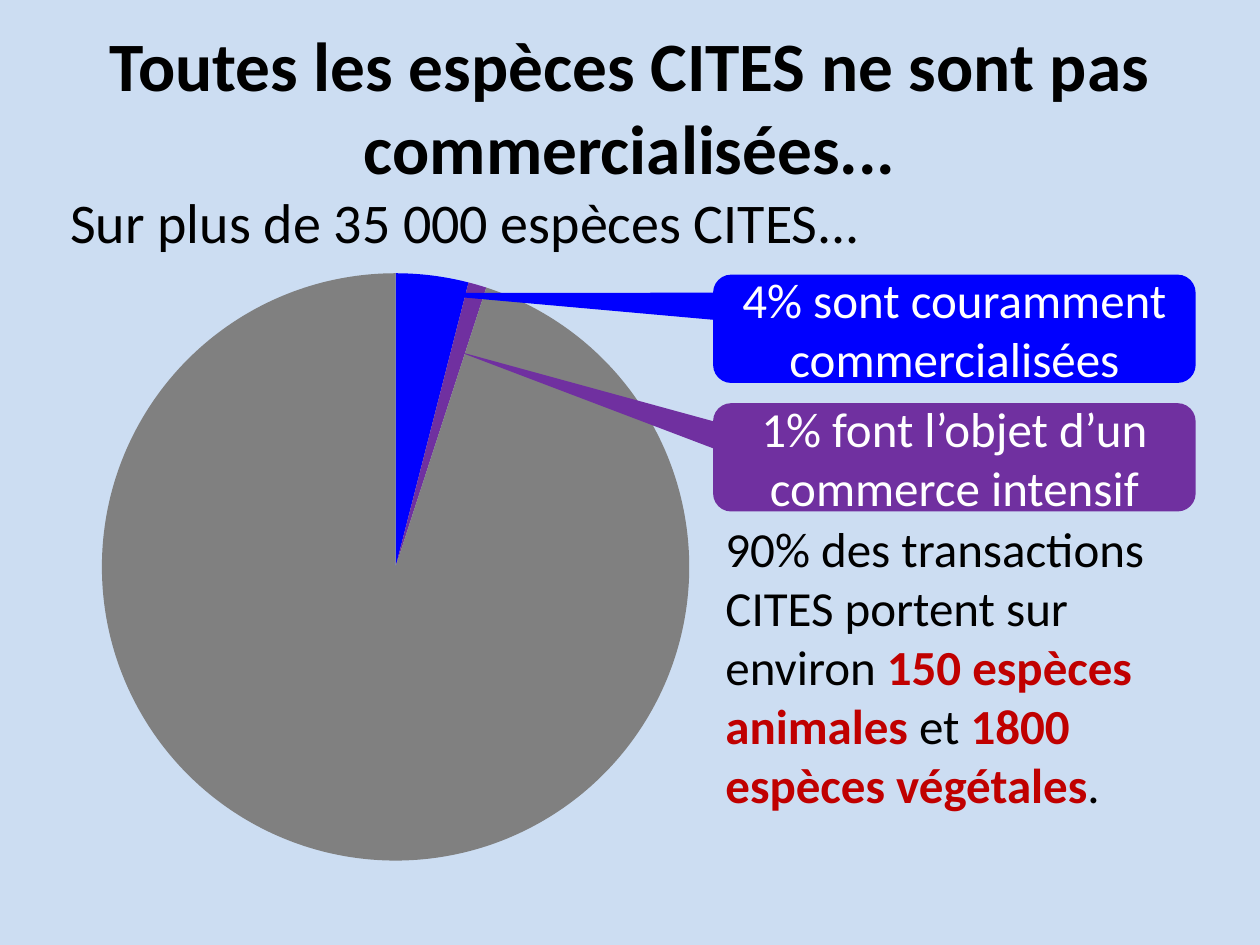
"""Build the slide on the share of CITES species that are traded."""
from lxml import etree
from pptx import Presentation
from pptx.chart.data import CategoryChartData
from pptx.dml.color import RGBColor
from pptx.enum.chart import XL_CHART_TYPE
from pptx.enum.shapes import MSO_SHAPE
from pptx.enum.text import MSO_ANCHOR, PP_ALIGN
from pptx.oxml import parse_xml
from pptx.oxml.ns import nsdecls, qn
from pptx.util import Inches, Pt

PIE = XL_CHART_TYPE.PIE
CALLOUT = MSO_SHAPE.ROUNDED_RECTANGULAR_CALLOUT
TOP, MIDDLE = MSO_ANCHOR.TOP, MSO_ANCHOR.MIDDLE
LEFT, CENTER = PP_ALIGN.LEFT, PP_ALIGN.CENTER
FONT = "Calibri"
COLORS = {
    "background": "CCDDF2",
    "text": "000000",
    "white": "FFFFFF",
    "common": "0000FF",
    "intensive": "7030A0",
    "other": "808080",
    "accent": "C00000",
}


def color(name):
    return RGBColor.from_string(COLORS[name])


def write(shape, runs, size, ink="text", align=LEFT, anchor=TOP):
    frame = shape.text_frame
    frame.word_wrap = True
    frame.vertical_anchor = anchor
    paragraph = frame.paragraphs[0]
    paragraph.alignment = align
    paragraph.font.name = FONT
    paragraph.font.size = Pt(size)
    paragraph.font.color.rgb = color(ink)
    for text, emphasis in runs:
        run = paragraph.add_run()
        run.text = text
        if emphasis:
            run.font.bold = True
            run.font.color.rgb = color(emphasis)


presentation = Presentation()
presentation.slide_width = Inches(10)
presentation.slide_height = Inches(7.5)
slide = presentation.slides.add_slide(presentation.slide_layouts[6])
slide.background.fill.solid()
slide.background.fill.fore_color.rgb = color("background")

title = slide.shapes.add_textbox(Inches(0), Inches(0.21), Inches(10), Inches(1.25))
write(title, [("Toutes les espèces CITES ne sont pas commercialisées...", "text")],
      39.6, align=CENTER, anchor=MIDDLE)

subtitle = slide.shapes.add_textbox(Inches(0.46), Inches(1.44), Inches(9.07), Inches(0.9))
write(subtitle, [("Sur plus de 35 000 espèces CITES...", None)], 32)

chart_data = CategoryChartData()
chart_data.categories = ["1", "2", "3"]
chart_data.add_series("Series 1", [4, 1, 95])
chart = slide.shapes.add_chart(
    PIE, Inches(0.07), Inches(2.02), Inches(6.14), Inches(4.96), chart_data).chart
chart.has_legend = False
chart.has_title = False
chart.font.name = FONT
chart.font.size = Pt(10)
chart.font.color.rgb = color("text")
plot = chart.plots[0]
plot.vary_by_categories = True
for index, name in enumerate(["common", "intensive", "other"]):
    point = plot.series[0].points[index]
    point.format.fill.solid()
    point.format.fill.fore_color.rgb = color(name)
    point.format.line.fill.background()

plot_area = chart.element.find(".//" + qn("c:plotArea"))
for old_layout in plot_area.findall(qn("c:layout")):
    plot_area.remove(old_layout)
layout = parse_xml(f"<c:layout {nsdecls('c')}><c:manualLayout/></c:layout>")
settings = [("layoutTarget", "inner"), ("xMode", "edge"), ("yMode", "edge"),
            ("x", "0.12"), ("y", "0.03"), ("w", "0.76"), ("h", "0.94")]
for tag, value in settings:
    etree.SubElement(layout[0], qn(f"c:{tag}")).set("val", value)
plot_area.insert(0, layout)

callouts = [
    ("4% sont couramment commercialisées", "common", 2.18, (-1.12, -0.33)),
    ("1% font l’objet d’un commerce intensif", "intensive", 3.2, (-1.03, -0.98)),
]
for text, fill, top, tip in callouts:
    callout = slide.shapes.add_shape(
        CALLOUT, Inches(5.66), Inches(top), Inches(3.83), Inches(0.86))
    callout.shadow.inherit = False
    callout.adjustments[0], callout.adjustments[1] = tip
    callout.fill.solid()
    callout.fill.fore_color.rgb = color(fill)
    callout.line.fill.background()
    write(callout, [(text, None)], 28, "white", CENTER, MIDDLE)

conclusion = slide.shapes.add_textbox(
    Inches(5.66), Inches(4.07), Inches(4.06), Inches(2.46))
write(conclusion, [
    ("90% des transactions CITES portent sur environ ", None),
    ("150 espèces animales ", "accent"),
    ("et ", None),
    ("1800 espèces végétales", "accent"),
    (".", None),
], 28)

presentation.save("out.pptx")
